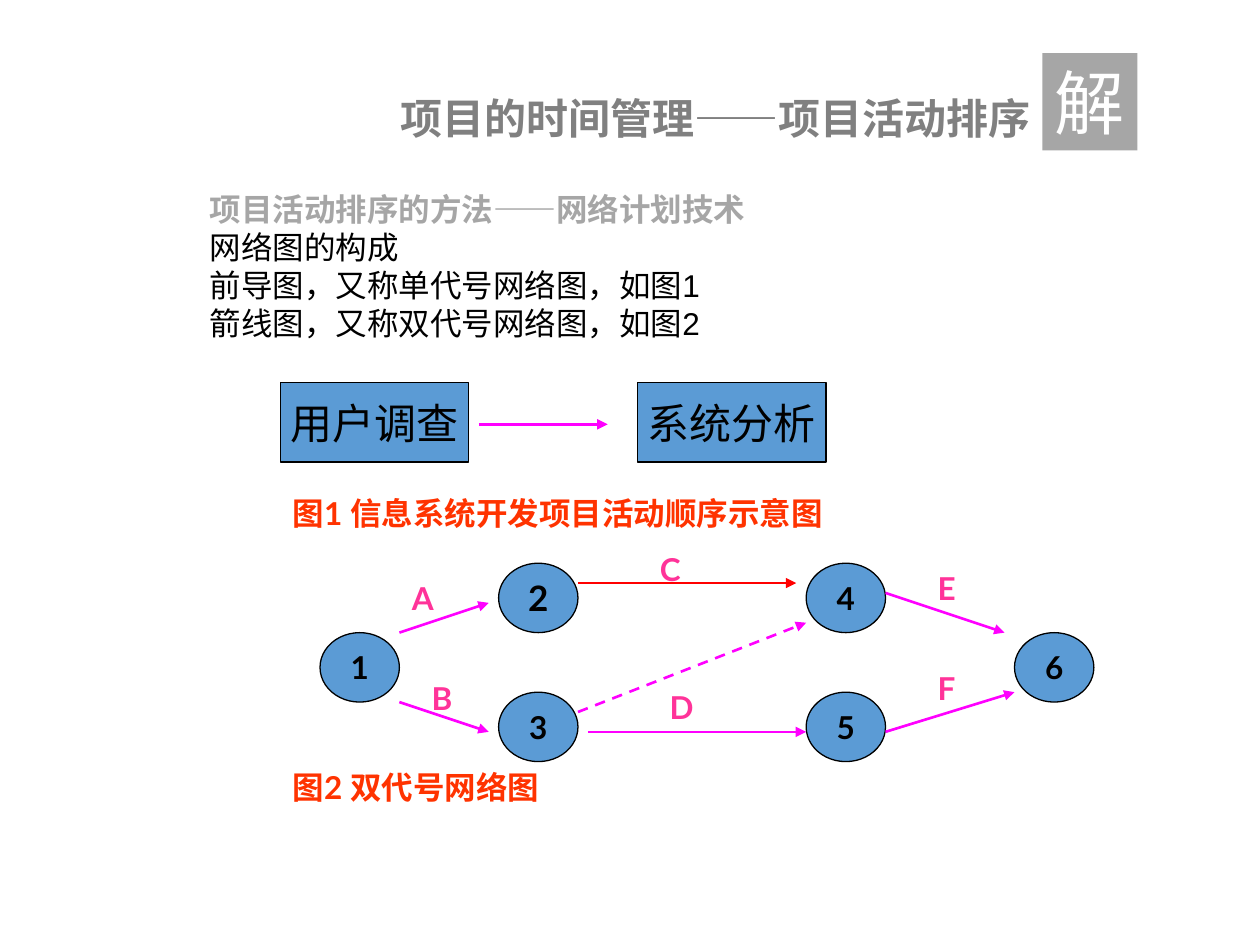
from lxml.etree import SubElement
from pptx import Presentation
from pptx.dml.color import RGBColor
from pptx.enum.dml import MSO_LINE
from pptx.enum.shapes import MSO_CONNECTOR, MSO_SHAPE
from pptx.enum.text import MSO_ANCHOR, MSO_AUTO_SIZE, PP_ALIGN
from pptx.oxml.ns import qn
from pptx.util import Inches, Mm, Pt

BLACK = RGBColor(0x00, 0x00, 0x00)
WHITE = RGBColor(0xFF, 0xFF, 0xFF)
GREY = RGBColor(0x80, 0x80, 0x80)
SILVER = RGBColor(0xA6, 0xA6, 0xA6)
BLUE = RGBColor(0x5B, 0x9B, 0xD5)
MAGENTA = RGBColor(0xFF, 0x00, 0xFF)
RED = RGBColor(0xFF, 0x00, 0x00)
PINK = RGBColor(0xFF, 0x33, 0x99)
ORANGE = RGBColor(0xFF, 0x33, 0x00)

CJK, SANS, LATIN = "Noto Sans CJK SC", "Arial", "Lato"

# Columns and rows count from the top left of the network diagram.
NODE_COLS, NODE_ROWS = 8, 7
NODES = [  # number, column, row, text size
    ("1", 0, 7, 18), ("2", 18, 0, 20), ("3", 18, 13, 18),
    ("4", 49, 0, 18), ("5", 49, 13, 18), ("6", 70, 7, 18),
]
ACTIVITIES = [  # start, end, colour, dash
    ((8, 7), (17, 4), MAGENTA, None),
    ((8, 14), (17, 17), MAGENTA, None),
    ((26, 2), (48, 2), RED, None),
    ((27, 17), (49, 17), MAGENTA, None),
    ((57, 3), (69, 7), MAGENTA, None),
    ((57, 17), (70, 13), MAGENTA, None),
    ((26, 15), (49, 6), MAGENTA, MSO_LINE.DASH),
]
ACTIVITY_NAMES = [
    ("A", 8, 1), ("B", 10, 11), ("C", 33, -2),
    ("D", 34, 12), ("E", 61, 0), ("F", 61, 10),
]
STEPS = [("用户调查", -4), ("系统分析", 32)]
CAPTIONS = [
    ("图1 信息系统开发项目活动顺序示意图", -7.6, 67),
    ("图2 双代号网络图", 20, 61),
]
METHODS = [
    "项目活动排序的方法——网络计划技术",
    "网络图的构成",
    "前导图，又称单代号网络图，如图1",
    "箭线图，又称双代号网络图，如图2",
]


class Sheet:
    """A slide on a 2 mm grid, with the style of its elements."""

    LEFT, TOP, CELL = Inches(2.54), Inches(4.47), Mm(2)

    def __init__(self, slide):
        self.slide = slide
        self.shapes = slide.shapes

    def point(self, col, row):
        return (round(self.LEFT + col * self.CELL),
                round(self.TOP + row * self.CELL))

    def area(self, col, row, cols, rows):
        return *self.point(col, row), round(cols * self.CELL), round(rows * self.CELL)

    def style(self, paragraph, size, color, font=LATIN, bold=False, align=PP_ALIGN.LEFT):
        paragraph.alignment = align
        for run in paragraph.runs:
            run.font.size, run.font.bold = Pt(size), bold
            run.font.color.rgb = color
            run.font.name = font
            SubElement(run._r.get_or_add_rPr(), qn("a:ea"), typeface=CJK)

    def title(self, text, area):
        title = self.shapes.title
        title.left, title.top, title.width, title.height = self.area(*area)
        frame = title.text_frame
        frame.text = text
        frame.auto_size = MSO_AUTO_SIZE.NONE
        frame.vertical_anchor = MSO_ANCHOR.TOP
        self.style(frame.paragraphs[0], 24, GREY, CJK, True, PP_ALIGN.RIGHT)

    def text(self, text, area, size, color, font=LATIN, bold=True, wrap=True):
        box = self.shapes.add_textbox(*self.area(*area))
        box.text_frame.word_wrap = wrap
        box.text_frame.text = text
        for paragraph in box.text_frame.paragraphs:
            self.style(paragraph, size, color, font, bold)
        return box

    def block(self, kind, area, fill, outline, width):
        shape = self.shapes.add_shape(kind, *self.area(*area))
        shape.shadow.inherit = False
        shape.fill.solid()
        shape.fill.fore_color.rgb = fill
        shape.line.color.rgb = outline
        shape.line.width = Pt(width)
        return shape

    def labelled(self, kind, text, area, size, bold):
        shape = self.block(kind, area, BLUE, BLACK, 0.75)
        frame = shape.text_frame
        frame.word_wrap = False
        frame.vertical_anchor = MSO_ANCHOR.MIDDLE
        frame.text = text
        self.style(frame.paragraphs[0], size, BLACK, bold=bold, align=PP_ALIGN.CENTER)

    def arrow(self, start, end, color, width=1.5, dash=None):
        arrow = self.shapes.add_connector(
            MSO_CONNECTOR.STRAIGHT, *self.point(*start), *self.point(*end))
        arrow.line.color.rgb = color
        arrow.line.width = Pt(width)
        if dash:
            arrow.line.dash_style = dash
        properties = arrow._element.spPr
        SubElement(properties.find(qn("a:ln")), qn("a:tailEnd"), type="triangle")
        SubElement(properties, qn("a:effectLst"))


def add_heading(sheet):
    sheet.title("项目的时间管理——项目活动排序", (5.84, -48.1, 67, 6.4))
    sheet.block(MSO_SHAPE.RECTANGLE, (72.8, -51.4, 9.6, 9.3), SILVER, WHITE, 1)
    badge = sheet.text("解", (72.8, -51.4, 9.6, 9.8), 40, WHITE, SANS, False, wrap=False)
    badge.fill.solid()
    badge.fill.fore_color.rgb = SILVER


def add_methods(sheet):
    body = sheet.text("\n".join(METHODS), (-18.7, -38.2, 96.8, 16.6), 18, BLACK, SANS, False)
    lines = body.text_frame.paragraphs
    for line in lines:
        line._p.get_or_add_pPr().set("indent", str(Inches(0.5)))
    heading = lines[0].runs[0].font
    heading.name, heading.bold = CJK, True
    heading.color.rgb = SILVER


def add_diagrams(sheet):
    for step, col in STEPS:
        sheet.labelled(MSO_SHAPE.RECTANGLE, step, (col, -18.2, 19, 8), 24, False)
    sheet.arrow((16, -14), (29, -14), MAGENTA, 2)
    for number, col, row, size in NODES:
        sheet.labelled(MSO_SHAPE.OVAL, number, (col, row, NODE_COLS, NODE_ROWS), size, True)
    for start, end, color, dash in ACTIVITIES:
        sheet.arrow(start, end, color, dash=dash)
    for name, col, row in ACTIVITY_NAMES:
        sheet.text(name, (col, row, 5, 5), 18, PINK)
    for caption, row, cols in CAPTIONS:
        sheet.text(caption, (-4, row, cols, 5), 18, ORANGE)


def main():
    deck = Presentation()
    deck.slide_width, deck.slide_height = Inches(10), Inches(7.5)
    sheet = Sheet(deck.slides.add_slide(deck.slide_layouts.get_by_name("Title Only")))
    add_heading(sheet)
    add_methods(sheet)
    add_diagrams(sheet)
    deck.save("out.pptx")


if __name__ == "__main__":
    main()
